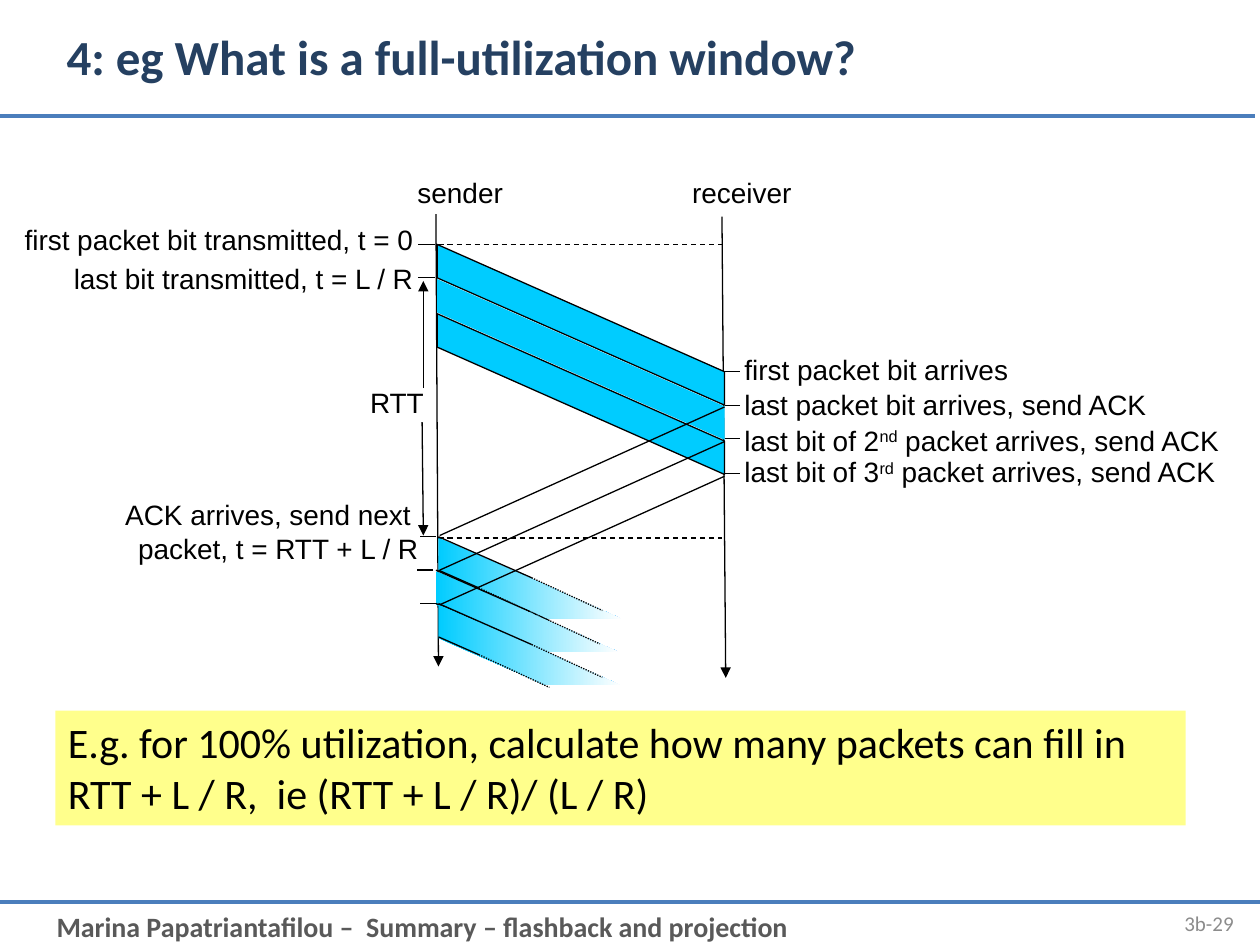
from pptx import Presentation
from pptx.dml.color import RGBColor
from pptx.enum.dml import MSO_LINE_DASH_STYLE
from pptx.enum.shapes import MSO_CONNECTOR_TYPE, MSO_SHAPE
from pptx.enum.text import MSO_ANCHOR, PP_ALIGN
from pptx.oxml.ns import qn
from pptx.util import Inches, Pt
from lxml import etree

STRAIGHT = MSO_CONNECTOR_TYPE.STRAIGHT
RECTANGLE = MSO_SHAPE.RECTANGLE
DASH = MSO_LINE_DASH_STYLE.DASH
DOTTED = MSO_LINE_DASH_STYLE.ROUND_DOT
LEFT, RIGHT = PP_ALIGN.LEFT, PP_ALIGN.RIGHT
TOP, MIDDLE = MSO_ANCHOR.TOP, MSO_ANCHOR.MIDDLE

BLACK = RGBColor(0x00, 0x00, 0x00)
WHITE = RGBColor(0xFF, 0xFF, 0xFF)
YELLOW = RGBColor(0xFF, 0xFF, 0x00)
CYAN = RGBColor(0x00, 0xCC, 0xFF)
RULE_BLUE = RGBColor(0x4B, 0x7E, 0xBC)
TITLE_BLUE = RGBColor(0x25, 0x40, 0x61)
FOOTER_GRAY = RGBColor(0x59, 0x59, 0x59)
NUMBER_GRAY = RGBColor(0x8C, 0x8C, 0x8C)

SLIDE_WIDTH, SLIDE_HEIGHT = Inches(10), Inches(7.5)
COLUMN = SLIDE_WIDTH / 100
ROW = SLIDE_HEIGHT / 75

SENDER, RECEIVER = 34.7, 57.5
PACKET = 2.65
TRAVEL = 10.1
FIRST_SENT = 19.4
FIRST_ACK = 42.6


def grid(column, row):
    return round(column * COLUMN), round(row * ROW)


def add_line(shapes, start, end, color=BLACK, width=0.75, dash=None, arrow=False):
    line = shapes.add_connector(STRAIGHT, *grid(*start), *grid(*end))
    line.line.color.rgb = color
    line.line.width = Pt(width)
    if dash is not None:
        line.line.dash_style = dash
    properties = line._element.spPr
    if arrow:
        etree.SubElement(properties.find(qn("a:ln")), qn("a:tailEnd"), type="triangle")
    etree.SubElement(properties, qn("a:effectLst"))


def add_band(shapes, points, outlined=False, fading=False):
    corners = [grid(*point) for point in points]
    builder = shapes.build_freeform(*corners[0], scale=1.0)
    builder.add_line_segments(corners[1:], close=True)
    band = builder.convert_to_shape()
    band.shadow.inherit = False
    if fading:
        band.fill.gradient()
        band.fill.gradient_angle = 0
        for stop, color, position in zip(band.fill.gradient_stops, (CYAN, WHITE), (0, 1)):
            stop.color.rgb = color
            stop.position = position
    else:
        band.fill.solid()
        band.fill.fore_color.rgb = CYAN
    if outlined:
        band.line.color.rgb = BLACK
        band.line.width = Pt(0.75)
    else:
        band.line.fill.background()


def add_text(shapes, area, *paragraphs, size=16, font="Arial", color=BLACK,
             bold=False, align=LEFT, anchor=TOP, fill=None, opacity=None):
    position = (*grid(*area[:2]), *grid(*area[2:]))
    if fill is None:
        box = shapes.add_textbox(*position)
    else:
        box = shapes.add_shape(RECTANGLE, *position)
        box.shadow.inherit = False
        box.line.fill.background()
        box.fill.solid()
        box.fill.fore_color.rgb = fill
        if opacity is not None:
            tint = box._element.spPr.find(qn("a:solidFill"))[0]
            etree.SubElement(tint, qn("a:alpha"), val=str(opacity * 1000))
    frame = box.text_frame
    frame.word_wrap = True
    frame.vertical_anchor = anchor
    for index, pieces in enumerate(paragraphs):
        para = frame.paragraphs[0] if index == 0 else frame.add_paragraph()
        para.alignment = align
        pieces = [pieces] if isinstance(pieces, str) else pieces
        for order, piece in enumerate(pieces):
            span = para.add_run()
            span.text = piece
            span.font.size = Pt(size)
            span.font.name = font
            span.font.bold = bold
            span.font.color.rgb = color
            if order % 2:
                span._r.get_or_add_rPr().set("baseline", "30000")


def add_sent_packet(shapes, order, outlined):
    top = FIRST_SENT + order * (PACKET + 0.1)
    points = [(SENDER, top), (RECEIVER, top + TRAVEL),
              (RECEIVER, top + TRAVEL + PACKET), (SENDER, top + PACKET)]
    add_band(shapes, points, outlined=outlined)


def add_next_packet(shapes, left, top):
    group = shapes.add_group_shape().shapes
    add_line(group, (left - 0.2, top), (left - 1.5, top))
    add_band(group, [(left, top + 0.1), (left + 14.5, top + 6.5),
                     (left + 8.6, top + 6.5), (left, top + PACKET + 0.1)], fading=True)
    for drop, solid in ((0, 7.4), (PACKET, 3.2)):
        begin = top + drop
        bend = (left + solid, begin + solid * 0.44)
        add_line(group, (left, begin), bend)
        add_line(group, bend, (bend[0] + 5.6, bend[1] + 2.6), dash=DOTTED)


def add_frame(shapes):
    add_line(shapes, (0, 71.6), (100, 71.6), color=RULE_BLUE, width=2.25)
    add_text(shapes, (3.5, 71.7, 92.5, 3.7),
             "Marina Papatriantafilou –  Summary – flashback and projection",
             font="Calibri", color=FOOTER_GRAY, bold=True)
    add_line(shapes, (-0.4, 9.2), (99.6, 9.2), color=RULE_BLUE, width=2.25)
    add_text(shapes, (90.9, 71.3, 8, 4), "3b-29", size=12, font="Calibri",
             color=NUMBER_GRAY, align=RIGHT, anchor=MIDDLE)
    add_text(shapes, (4.3, 1.3, 93.7, 6.3), "4: eg What is a full-utilization window?",
             size=28, font="Calibri", color=TITLE_BLUE, bold=True, anchor=MIDDLE)


def add_sender_side(shapes):
    add_text(shapes, (0, 17.2, 33.8, 3.9), "first packet bit transmitted, t = 0",
             align=RIGHT, fill=WHITE)
    add_text(shapes, (29.5, 13.4, 11.4, 3.9), "sender", align=RIGHT, fill=WHITE)
    add_text(shapes, (51.7, 13.4, 12.1, 3.9), "receiver", align=RIGHT, fill=WHITE)
    add_line(shapes, (34.6, 17), (34.8, 52.9), arrow=True)
    add_line(shapes, (57.3, 17.2), (57.6, 53.8), arrow=True)
    for row in (FIRST_SENT, FIRST_ACK + 0.1):
        add_line(shapes, (34.8, row), (57.3, row), dash=DASH)
    for row in (FIRST_SENT, 22):
        add_line(shapes, (34.5, row), (33.2, row))
    add_text(shapes, (24.6, 30.1, 10.6, 3.7), "RTT ", align=RIGHT)
    add_line(shapes, (33.5, 33.5), (33.6, 42.5), arrow=True)
    add_line(shapes, (33.6, 30.8), (33.6, 22.3), arrow=True)
    add_text(shapes, (3.8, 20.3, 30, 3.9), "last bit transmitted, t = L / R", align=RIGHT)
    add_text(shapes, (5.4, 39, 28.8, 7), "ACK arrives, send next ",
             "packet, t = RTT + L / R", align=RIGHT)


def add_receiver_side(shapes):
    arrivals = [
        (29.5, 27.5, "first packet bit arrives"),
        (32.2, 30.3, "last packet bit arrives, send ACK"),
        (34.8, 33.1, ("last bit of 2", "nd", " packet arrives, send ACK")),
        (37.6, 35.6, ("last bit of 3", "rd", " packet arrives, send ACK")),
    ]
    for tick, top, label in arrivals:
        add_line(shapes, (RECEIVER, tick), (58.7, tick))
        add_text(shapes, (58.1, top, 41.9, 4.2), label)


def add_exchange(shapes):
    starts = [(34.8, FIRST_ACK), (34.6, FIRST_ACK + PACKET), (34.8, FIRST_ACK + 2 * PACKET)]
    add_sent_packet(shapes, 0, True)
    add_next_packet(shapes, *starts[0])
    for order, outlined in ((1, False), (2, True)):
        add_sent_packet(shapes, order, outlined)
    for left, top in starts[1:]:
        add_next_packet(shapes, left, top)
    for order in range(3):
        drop = order * 2.75
        add_line(shapes, (34.9, 42.5 + drop), (RECEIVER, 32.3 + drop))


def main():
    deck = Presentation()
    deck.slide_width, deck.slide_height = SLIDE_WIDTH, SLIDE_HEIGHT
    page = deck.slides.add_slide(deck.slide_layouts[6])
    shapes = page.shapes
    add_frame(shapes)
    add_sender_side(shapes)
    add_exchange(shapes)
    add_receiver_side(shapes)
    add_text(shapes, (4.4, 56.4, 89.7, 9.1),
             "E.g. for 100% utilization, calculate how many packets can fill in "
             "RTT + L / R,  ie (RTT + L / R)/ (L / R)",
             size=24, font="Calibri", fill=YELLOW, opacity=45)
    deck.save("out.pptx")


if __name__ == "__main__":
    main()
